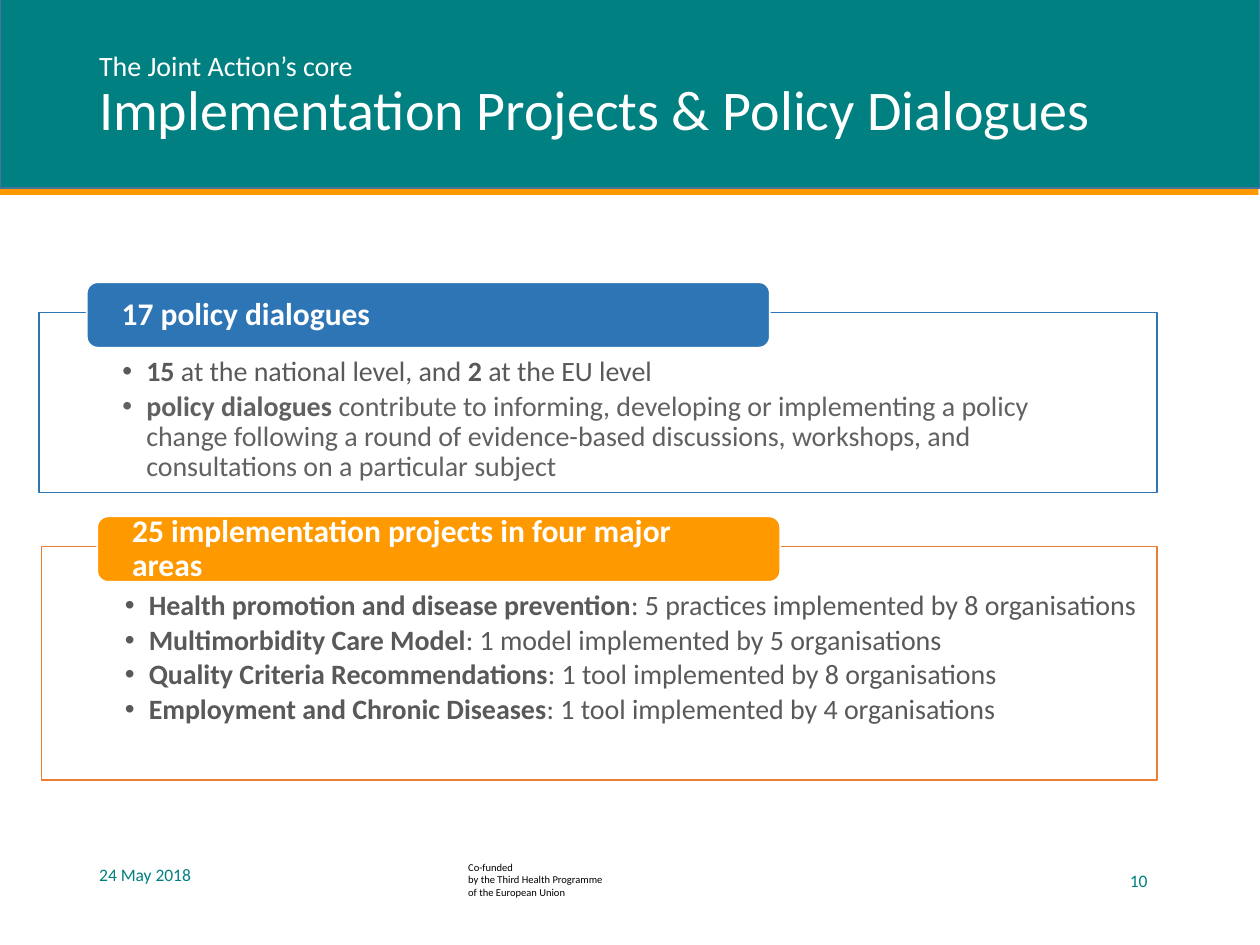
from lxml import etree
from pptx import Presentation
from pptx import util as u
from pptx.dml.color import RGBColor
from pptx.enum import shapes, text
from pptx.oxml.ns import qn

THEME = {
    "font": "Calibri",
    "teal": "008080", "teal_line": "43739E", "orange": "FF9900",
    "orange_line": "ED7D31", "blue": "2E75B6", "white": "FFFFFF",
    "black": "000000", "grey": "595959", "light_grey": "616161",
    "title": 32, "tab": 18, "body": 16, "footer": 10, "credit": 6,
}

# Content: each span is (words, bold)
TITLE = ("The Joint Action’s core", "Implementation Projects & Policy Dialogues")
PANELS = [
    {
        "heading": "17 policy dialogues", "fill": "blue", "line": "blue",
        "frame": (0.79, 6.3, 22.53, 3.63), "tab_left": 1.75, "right_inset": 2.01,
        "items": [
            ("grey", [("15", True), (" at the national level, and ", False),
                      ("2", True), (" at the EU level", False)]),
            ("light_grey", [
                ("policy dialogues ", True),
                ("contribute to informing, developing or implementing a policy "
                 "change following a round of evidence-based discussions, "
                 "workshops, and consultations on a particular subject", False)]),
        ],
    },
    {
        "heading": "25 implementation projects in four major areas",
        "fill": "orange", "line": "orange_line",
        "frame": (0.84, 11.02, 22.48, 4.7), "tab_left": 1.96, "right_inset": 0.07,
        "items": [
            ("grey", [(area, True), (": " + result, False)]) for area, result in (
                ("Health promotion and disease prevention",
                 "5 practices implemented by 8 organisations"),
                ("Multimorbidity Care Model", "1 model implemented by 5 organisations"),
                ("Quality Criteria Recommendations",
                 "1 tool implemented by 8 organisations"),
                ("Employment and Chronic Diseases",
                 "1 tool implemented by 4 organisations"),
            )
        ],
    },
]
CREDIT = ["Co-funded", "by the Third Health Programme", "of the European Union"]
FOOTERS = [
    ("24 May 2018", (1.75, 17.12, 3.76, 1.02), text.PP_ALIGN.LEFT),
    ("10", (22.28, 17.25, 1.35, 1.02), text.PP_ALIGN.CENTER),
]
TAB_WIDTH, TAB_HEIGHT, TAB_RISE = 13.77, 1.32, 0.61
INSETS = (0.25, 0.13, 0.25, 0.13)
RECT = shapes.MSO_SHAPE.RECTANGLE
ROUNDED = shapes.MSO_SHAPE.ROUNDED_RECTANGLE
MIDDLE = text.MSO_ANCHOR.MIDDLE


def color(name):
    return RGBColor.from_string(THEME[name])


def apply(target, values):
    for name, value in values.items():
        setattr(target, name, value)


def add_shape(page, kind, place, fill, line=None):
    shape = page.shapes.add_shape(kind, *map(u.Cm, place))
    shape.shadow.inherit = False
    shape.fill.solid()
    shape.fill.fore_color.rgb = color(fill)
    if line:
        shape.line.color.rgb = color(line)
        shape.line.width = u.Pt(1)
    else:
        shape.line.fill.background()
    return shape


def add_box(page, place):
    return page.shapes.add_textbox(*map(u.Cm, place))


def set_frame(box, insets=INSETS, anchor=text.MSO_ANCHOR.TOP, wrap=True):
    sides = ("margin_left", "margin_top", "margin_right", "margin_bottom")
    apply(box.text_frame, dict(zip(sides, map(u.Cm, insets))))
    apply(box.text_frame, {"vertical_anchor": anchor, "word_wrap": wrap})
    return box.text_frame


def add_span(para, words, size, shade, bold=False):
    span = para.add_run()
    span.text = words
    apply(span.font, {"name": THEME["font"], "size": u.Pt(THEME[size]), "bold": bold})
    span.font.color.rgb = color(shade)


def add_paragraphs(frame, count):
    return [frame.paragraphs[0]] + [frame.add_paragraph() for _ in range(count - 1)]


def set_bullet(para):
    props = para._p.get_or_add_pPr()
    props.set("marL", str(u.Cm(0.48)))
    props.set("indent", str(-u.Cm(0.48)))
    etree.SubElement(props, qn("a:buFont")).set("typeface", "Arial")
    etree.SubElement(props, qn("a:buChar")).set("char", "•")


def add_panel(page, panel):
    left, top, width, height = panel["frame"]
    # Framed list
    box = add_shape(page, RECT, panel["frame"], "white", panel["line"])
    fill_color = box.fill._xPr.find(qn("a:solidFill"))[0]
    etree.SubElement(fill_color, qn("a:alpha")).set("val", "90000")
    frame = set_frame(box, (1.68, 0.91, panel["right_inset"], 0.3))
    items = panel["items"]
    for para, (shade, spans) in zip(add_paragraphs(frame, len(items)), items):
        set_bullet(para)
        apply(para, {"alignment": text.PP_ALIGN.LEFT, "line_spacing": 0.9,
                     "space_after": u.Pt(2.4)})
        for words, bold in spans:
            add_span(para, words, "body", shade, bold)
    # Heading tab over the frame's top edge
    place = (panel["tab_left"], top - TAB_RISE, TAB_WIDTH, TAB_HEIGHT)
    tab = add_shape(page, ROUNDED, place, panel["fill"], "white")
    para = set_frame(tab, (0.64, 0, 0.64, 0), MIDDLE).paragraphs[0]
    apply(para, {"alignment": text.PP_ALIGN.LEFT, "line_spacing": 0.9})
    add_span(para, panel["heading"], "tab", "white", True)


def main():
    deck = Presentation()
    apply(deck, {"slide_width": u.Cm(25.4), "slide_height": u.Cm(19.05)})
    page = deck.slides.add_slide(deck.slide_layouts[6])

    # Header band and rule
    add_shape(page, RECT, (-0.03, 3.78, 25.4, 0.15), "orange")
    add_shape(page, RECT, (0, -0.05, 25.4, 3.84), "teal", "teal_line")

    # Title
    title = add_box(page, (1.75, 0.71, 21.89, 2.51))
    para = set_frame(title, anchor=MIDDLE).paragraphs[0]
    para.line_spacing = 0.9
    add_span(para, TITLE[0], "body", "white")
    para.add_line_break()
    add_span(para, TITLE[1], "title", "white")

    # Panels, lower one first
    for panel in reversed(PANELS):
        add_panel(page, panel)

    # Footer
    credit = set_frame(add_box(page, (9.19, 17.22, 3.25, 1.02)), wrap=False)
    for para, words in zip(add_paragraphs(credit, len(CREDIT)), CREDIT):
        add_span(para, words, "credit", "black")
    for words, place, alignment in FOOTERS:
        para = set_frame(add_box(page, place), anchor=MIDDLE).paragraphs[0]
        para.alignment = alignment
        add_span(para, words, "footer", "teal")

    deck.save("out.pptx")


if __name__ == "__main__":
    main()
